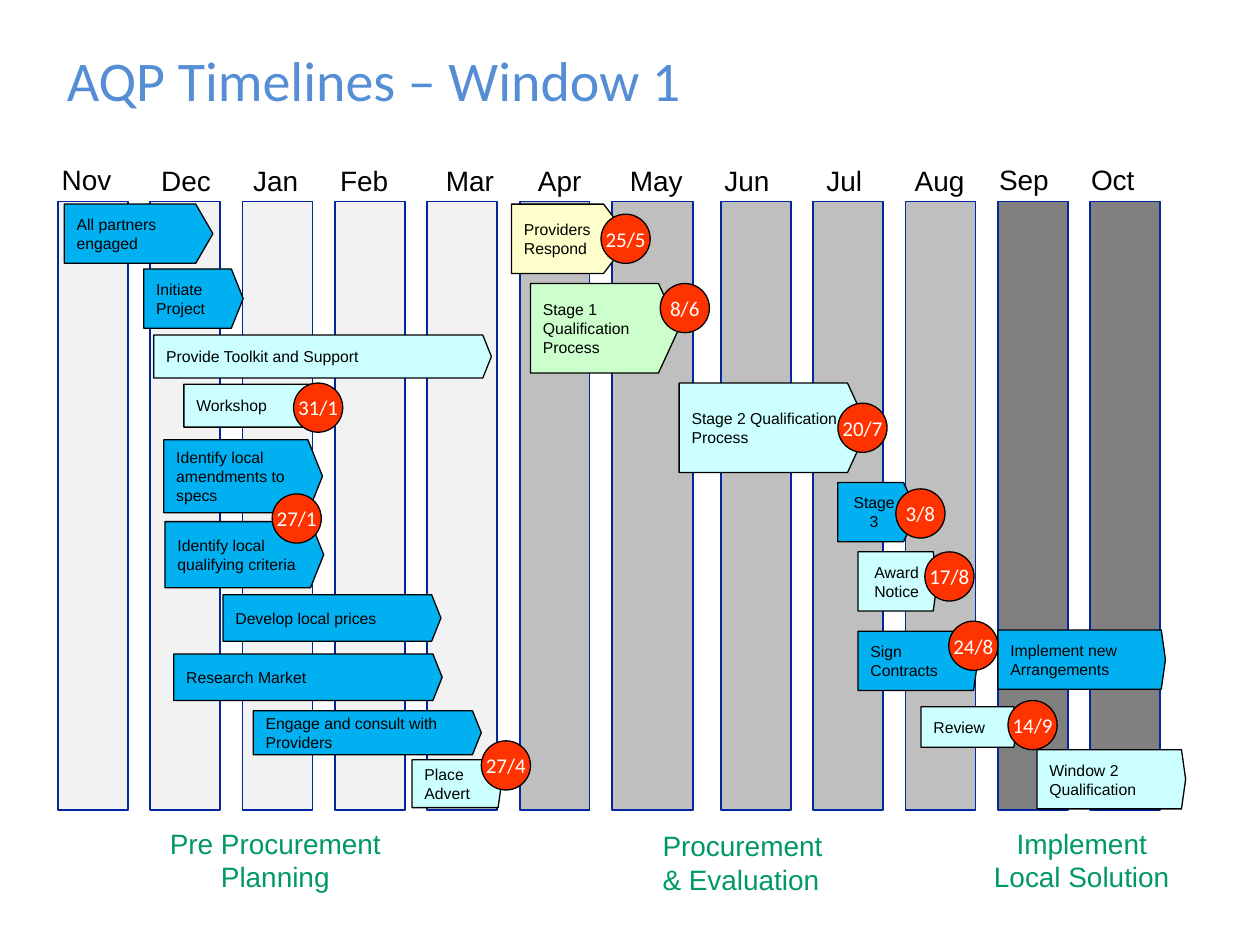
from pptx import Presentation
from pptx.dml.color import RGBColor as RGB
from pptx.enum.shapes import MSO_SHAPE as Kind
from pptx.enum.text import MSO_ANCHOR as Anchor, PP_ALIGN as Align
from pptx.util import Inches, Pt

TITLE = RGB(0x55, 0x8E, 0xD5)
BLACK = RGB(0, 0, 0)
WHITE = RGB(0xFF, 0xFF, 0xFF)
NAVY = RGB(0, 0x27, 0x9F)
GREEN = RGB(0, 0x99, 0x66)
RED = RGB(0xFF, 0x33, 0)
BLUE = RGB(0, 0xB0, 0xF0)
AQUA = RGB(0xCC, 0xFF, 0xFF)
CREAM = RGB(0xFF, 0xFF, 0xCC)
MINT = RGB(0xCC, 0xFF, 0xCC)
PALE = RGB(0xF2, 0xF2, 0xF2)
GREY = RGB(0xBF, 0xBF, 0xBF)
DARK = RGB(0x80, 0x80, 0x80)

COLS, ROWS = 100, 75

MONTHS = [
    ("Nov", 4.3, 12.3, PALE), ("Dec", 12.2, 12.4, PALE),
    ("Jan", 19.5, 12.4, PALE), ("Feb", 26.4, 12.4, PALE),
    ("Mar", 34.8, 12.4, PALE), ("Apr", 42.1, 12.4, GREY),
    ("May", 49.4, 12.4, GREY), ("Jun", 56.9, 12.4, GREY),
    ("Jul", 65, 12.4, GREY), ("Aug", 72, 12.4, GREY),
    ("Sep", 78.7, 12.3, DARK), ("Oct", 86, 12.3, DARK),
]
PHASES = [
    ("Pre Procurement\nPlanning", (11.8, 65.1, 20.1, 6.4), Align.CENTER),
    ("Procurement\n& Evaluation", (51.6, 65.3, 16.5, 6.4), Align.LEFT),
    ("Implement\nLocal Solution", (77.1, 65.1, 17.5, 6.4), Align.CENTER),
]
TASKS = [
    ("Place Advert", (32.7, 60.3, 7.1, 3.8), 0.07, AQUA),
    ("All partners engaged", (5.1, 16.2, 11.8, 4.7), 0.29, BLUE),
    ("Provide Toolkit and Support", (12.2, 26.6, 26.8, 3.4), 0.2, AQUA),
    ("Initiate Project", (11.4, 21.35, 7.9, 4.7), 0.2, BLUE),
    ("Identify local amendments to specs", (13, 34.9, 12.6, 5.8), 0.2, BLUE),
    ("Identify local qualifying criteria", (13.1, 41.4, 12.6, 5.25), 0.2, BLUE),
    ("Research Market", (13.8, 51.9, 21.3, 3.7), 0.2, BLUE),
    ("Engage and consult with Providers", (20.1, 56.4, 18.1, 3.5), 0.2, BLUE),
    ("Providers Respond", (40.6, 16.2, 9.4, 5.5), 0.38, CREAM),
    ("Stage 1 Qualification Process", (42.1, 22.5, 11.8, 7.1), 0.23, MINT),
    ("Stage 2 Qualification Process", (53.9, 30.4, 15, 7.1), 0.23, AQUA),
    ("Stage\n3", (66.5, 38.3, 6.3, 4.7), 0.23, BLUE),
    ("Award Notice", (68.1, 43.8, 6.3, 4.7), 0.07, AQUA),
    ("Sign Contracts", (68.1, 50.1, 9.5, 4.7), 0.07, BLUE),
    ("Workshop", (14.6, 30.5, 11, 3.4), 0.2, AQUA),
    ("Review", (73.1, 56.1, 7.6, 3.2), 0.07, AQUA),
    ("Implement new Arrangements", (79.2, 50, 13.3, 4.7), 0.07, BLUE),
    ("Window 2 Qualification", (82.3, 59.5, 11.8, 4.7), 0.07, AQUA),
    ("Develop local prices", (17.7, 47.2, 17.3, 3.7), 0.2, BLUE),
]
MID = {"Stage\n3", "Award Notice"}
DATES = [
    ("27/1", 21.6, 39.2), ("27/4", 38.2, 58.8), ("25/5", 47.7, 17),
    ("8/6", 52.4, 22.5), ("20/7", 66.5, 32), ("3/8", 71.1, 38.8),
    ("17/8", 73.4, 43.8), ("24/8", 75.3, 49.3), ("31/1", 23.3, 30.4),
    ("14/9", 80, 55.6),
]


class Chart:
    """Draws timeline parts on one slide, placed by columns and rows."""

    def __init__(self, deck):
        self.wide = deck.slide_width / COLS
        self.high = deck.slide_height / ROWS
        self.slide = deck.slides.add_slide(deck.slide_layouts[5])

    def place(self, box):
        x, y, w, h = box
        return [round(n) for n in (x * self.wide, y * self.high,
                                   w * self.wide, h * self.high)]

    def style(self, shape, text, size, color, align=Align.LEFT, font="Arial"):
        frame = shape.text_frame
        frame.text = text
        for para in frame.paragraphs:
            para.alignment = align
            for run in para.runs:
                run.font.size = Pt(size)
                run.font.name = font
                run.font.color.rgb = color
        return frame

    def title(self, text, box):
        head = self.slide.shapes.title
        head.left, head.top, head.width, head.height = self.place(box)
        frame = self.style(head, text, 32, TITLE, font="Calibri")
        frame.vertical_anchor = Anchor.MIDDLE

    def label(self, text, box, color=BLACK, align=Align.LEFT, pad=None):
        shape = self.slide.shapes.add_textbox(*self.place(box))
        frame = self.style(shape, text, 16, color, align)
        frame.word_wrap = pad is not None
        if pad is not None:
            frame.margin_left = frame.margin_right = Inches(pad)
            frame.margin_top = frame.margin_bottom = Inches(pad)

    def block(self, kind, box, fill, line=BLACK, width=0.75):
        shape = self.slide.shapes.add_shape(kind, *self.place(box))
        shape.shadow.inherit = False
        shape.fill.solid()
        shape.fill.fore_color.rgb = fill
        shape.line.color.rgb = line
        shape.line.width = Pt(width)
        return shape

    def bar(self, box, fill):
        self.block(Kind.RECTANGLE, box, fill, NAVY, 1)

    def task(self, text, box, tip, fill):
        shape = self.block(Kind.PENTAGON, box, fill)
        shape.adjustments[0] = tip
        align = Align.CENTER if text in MID else Align.LEFT
        frame = self.style(shape, text, 9, BLACK, align)
        frame.word_wrap = True
        frame.vertical_anchor = Anchor.MIDDLE

    def date(self, text, x, y):
        shape = self.block(Kind.OVAL, (x, y, 3.9, 3.9), RED)
        frame = self.style(shape, text, 12, WHITE, Align.CENTER, "Calibri")
        frame.word_wrap = False
        frame.vertical_anchor = Anchor.MIDDLE


def main():
    deck = Presentation()
    deck.slide_width, deck.slide_height = Inches(10), Inches(7.5)
    chart = Chart(deck)
    chart.title("AQP Timelines – Window 1", (4.3, 0, 60, 12.5))
    for i, (name, x, y, fill) in enumerate(MONTHS):
        left = 4.6 + 7.33 * i + (1.3 if i > 6 else 0)
        chart.bar((left, 16, 6.4 if name == "May" else 5.55, 48.3), fill)
        chart.label(name, (x, y, 9.4, 3.9), pad=0.06)
    for text, box, align in PHASES:
        chart.label(text, box, GREEN, align)
    for task in TASKS:
        chart.task(*task)
    for date in DATES:
        chart.date(*date)
    deck.save("out.pptx")


if __name__ == "__main__":
    main()
